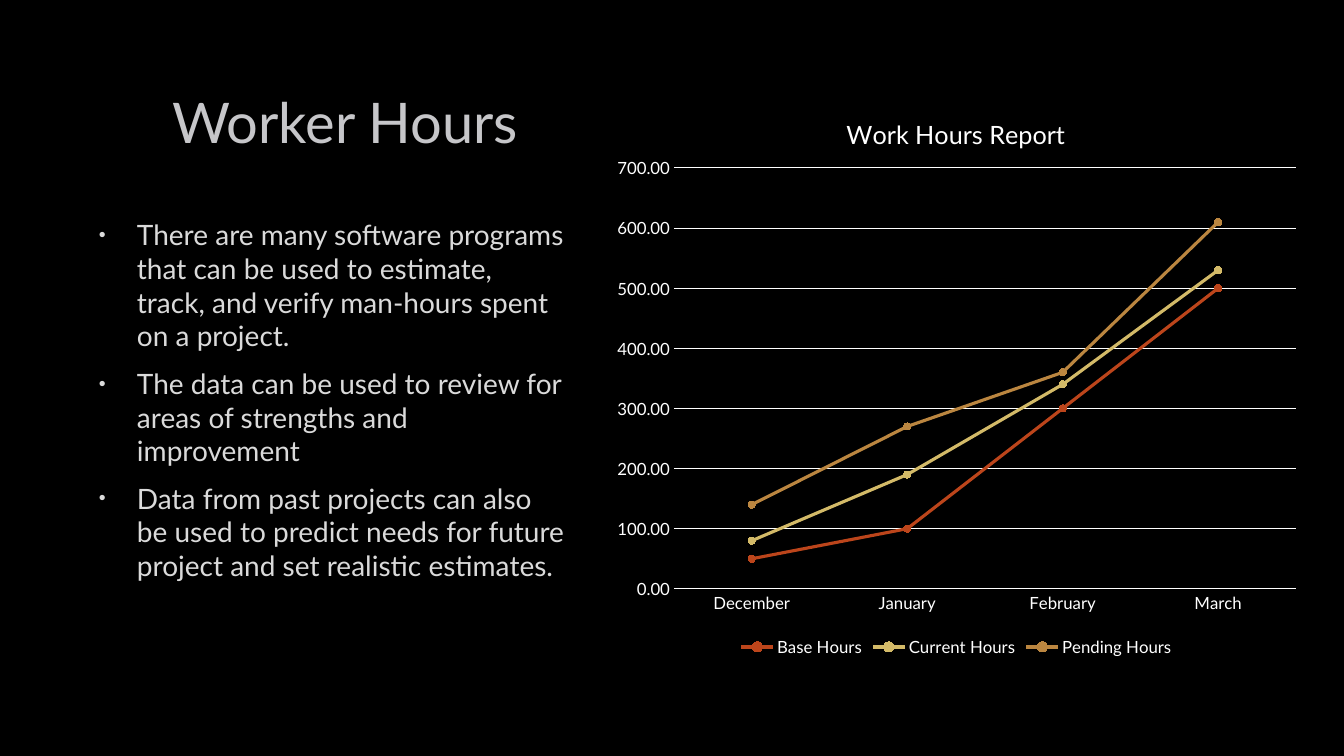
"""Build the Worker Hours slide: a bulleted text column beside a stacked line chart."""
from dataclasses import dataclass

from lxml import etree
from pptx import Presentation
from pptx.chart.axis import CategoryAxis, ValueAxis
from pptx.chart.chart import Chart
from pptx.chart.data import CategoryChartData
from pptx.dml.color import RGBColor
from pptx.enum.chart import XL_CHART_TYPE, XL_LEGEND_POSITION, XL_MARKER_STYLE, XL_TICK_MARK
from pptx.enum.text import MSO_ANCHOR, PP_ALIGN
from pptx.oxml import parse_xml
from pptx.oxml.ns import nsdecls, qn
from pptx.slide import Slide
from pptx.util import Emu, Pt

LINE_STACKED = XL_CHART_TYPE.LINE_MARKERS_STACKED
LEGEND_BOTTOM = XL_LEGEND_POSITION.BOTTOM
MARKER_CIRCLE = XL_MARKER_STYLE.CIRCLE
TICK_NONE = XL_TICK_MARK.NONE
TOP, MIDDLE = MSO_ANCHOR.TOP, MSO_ANCHOR.MIDDLE
LEFT, CENTER = PP_ALIGN.LEFT, PP_ALIGN.CENTER

FONT = "Lato"
BLACK = RGBColor(0x00, 0x00, 0x00)
WHITE = RGBColor(0xFF, 0xFF, 0xFF)
SILVER = RGBColor(0xC6, 0xC6, 0xC9)
LIGHT_GREY = RGBColor(0xDA, 0xDA, 0xDA)
OUTLINE_GREY = RGBColor(0x40, 0x40, 0x40)
RUST = RGBColor(0xBC, 0x45, 0x1B)
SAND = RGBColor(0xD3, 0xBA, 0x68)
BRONZE = RGBColor(0xBB, 0x86, 0x40)

EMU_PER_PX = 914400 / 100.8
BULLET_INDENT = 38


@dataclass(frozen=True)
class Area:
    """A rectangle in px."""

    left: int
    top: int
    width: int
    height: int

    def emu(self) -> tuple[Emu, Emu, Emu, Emu]:
        """Return the rectangle in EMU."""
        return px(self.left), px(self.top), px(self.width), px(self.height)


@dataclass(frozen=True)
class TextBlock:
    """A text box whose paragraphs share one format."""

    area: Area
    paragraphs: tuple[str, ...]
    size: int
    color: RGBColor
    anchor: MSO_ANCHOR
    align: PP_ALIGN
    bulleted: bool


@dataclass(frozen=True)
class HoursSeries:
    """One line of the chart."""

    name: str
    hours: tuple[int, ...]
    color: RGBColor


TEXT_BLOCKS = (
    TextBlock(Area(101, 68, 488, 107), ("Worker Hours",), 40, SILVER, MIDDLE, CENTER, False),
    TextBlock(
        Area(89, 213, 488, 448),
        (
            "There are many software programs that can be used to estimate, track, "
            "and verify man-hours spent on a project.",
            "The data can be used to review for areas of strengths and improvement",
            "Data from past projects can also be used to predict needs for future project "
            "and set realistic estimates.",
        ),
        20, LIGHT_GREY, TOP, LEFT, True,
    ),
)
CHART_AREA = Area(603, 89, 707, 572)
PLOT_AREA = Area(674, 168, 622, 421)
TITLE_LEFT, TITLE_TOP = 842, 112
MONTHS = ("December", "January", "February", "March")
SERIES = (
    HoursSeries("Base Hours", (50, 100, 300, 500), RUST),
    HoursSeries("Current Hours", (30, 90, 40, 30), SAND),
    HoursSeries("Pending Hours", (60, 80, 20, 80), BRONZE),
)


def px(length: int) -> Emu:
    """Convert px to EMU."""
    return Emu(round(length * EMU_PER_PX))


def apply(target: object, values: dict[str, object]) -> None:
    """Set each named attribute of the target."""
    for name, value in values.items():
        setattr(target, name, value)


def style_font(font: object, size: int, color: RGBColor) -> None:
    """Set the typeface, size and colour of a font."""
    apply(font, {"name": FONT, "size": Pt(size), "bold": False})
    font.color.rgb = color


def add_bullet(para: object, color: RGBColor) -> None:
    """Give a paragraph a hanging bullet and its spacing."""
    apply(para, {"space_before": Pt(4), "space_after": Pt(6)})
    properties = para._p.get_or_add_pPr()
    properties.set("marL", str(px(BULLET_INDENT)))
    properties.set("indent", str(-px(BULLET_INDENT)))
    for markup in (
        f'<a:buClr {nsdecls("a")}><a:srgbClr val="{color}"/></a:buClr>',
        f'<a:buSzPct {nsdecls("a")} val="70000"/>',
        f'<a:buFont {nsdecls("a")} typeface="Arial"/>',
        f'<a:buChar {nsdecls("a")} char="•"/>',
    ):
        properties.append(parse_xml(markup))


def add_outline(span: object) -> None:
    """Give a run a faint outline."""
    span._r.get_or_add_rPr().insert(0, parse_xml(
        f'<a:ln {nsdecls("a")} w="{Pt(0.75)}"><a:solidFill><a:srgbClr val="{OUTLINE_GREY}">'
        '<a:alpha val="10000"/></a:srgbClr></a:solidFill></a:ln>'
    ))


def add_text(page: Slide, block: TextBlock) -> None:
    """Draw one text block."""
    frame = page.shapes.add_textbox(*block.area.emu()).text_frame
    apply(frame, {"word_wrap": True, "vertical_anchor": block.anchor})
    for index, text in enumerate(block.paragraphs):
        para = frame.add_paragraph() if index else frame.paragraphs[0]
        para.alignment = block.align
        if block.bulleted:
            add_bullet(para, block.color)
        span = para.add_run()
        span.text = text
        style_font(span.font, block.size, block.color)
        add_outline(span)


def set_layout(parent: object, index: int, values: dict[str, object]) -> None:
    """Place a chart part by hand."""
    for old in parent.findall(qn("c:layout")):
        parent.remove(old)
    layout = etree.Element(qn("c:layout"))
    manual = etree.SubElement(layout, qn("c:manualLayout"))
    for name, value in values.items():
        etree.SubElement(manual, qn(f"c:{name}")).set("val", str(value))
    parent.insert(index, layout)


def fractions(left: int, top: int) -> dict[str, object]:
    """Return a point as fractions of the chart area."""
    return {
        "xMode": "edge",
        "yMode": "edge",
        "x": round((left - CHART_AREA.left) / CHART_AREA.width, 4),
        "y": round((top - CHART_AREA.top) / CHART_AREA.height, 4),
    }


def style_axis(axis: CategoryAxis | ValueAxis) -> None:
    """Set the labels and ticks of an axis."""
    apply(axis, {"major_tick_mark": TICK_NONE, "minor_tick_mark": TICK_NONE})
    style_font(axis.tick_labels.font, 12, WHITE)


def style_line(line: object, color: RGBColor, width: float) -> None:
    """Set the colour and width of a line."""
    line.color.rgb = color
    line.width = Pt(width)


def style_axes(chart: Chart) -> None:
    """Style both axes and the gridlines."""
    months, hours = chart.category_axis, chart.value_axis
    style_axis(months)
    style_axis(hours)
    style_line(months.format.line, WHITE, 0.75)
    apply(hours, {"minimum_scale": 0, "maximum_scale": 700, "major_unit": 100, "has_major_gridlines": True})
    style_line(hours.major_gridlines.format.line, WHITE, 0.75)
    hours.format.line.fill.background()
    apply(hours.tick_labels, {"number_format": "0.00", "number_format_is_linked": False})


def add_hours_chart(page: Slide) -> None:
    """Draw the stacked line chart."""
    data = CategoryChartData(number_format="0.00")
    data.categories = MONTHS
    for item in SERIES:
        data.add_series(item.name, item.hours)
    chart = page.shapes.add_chart(LINE_STACKED, *CHART_AREA.emu(), data).chart
    style_font(chart.font, 10, WHITE)
    apply(chart, {"has_title": True, "has_legend": True})
    apply(chart.legend, {"position": LEGEND_BOTTOM, "include_in_layout": False})
    style_font(chart.legend.font, 12, WHITE)
    span = chart.chart_title.text_frame.paragraphs[0].add_run()
    span.text = "Work Hours Report"
    style_font(span.font, 18, WHITE)
    set_layout(chart.chart_title._element, 1, fractions(TITLE_LEFT, TITLE_TOP))
    size = {
        "w": round(PLOT_AREA.width / CHART_AREA.width, 4),
        "h": round(PLOT_AREA.height / CHART_AREA.height, 4),
    }
    plot_layout = {"layoutTarget": "inner"} | fractions(PLOT_AREA.left, PLOT_AREA.top) | size
    set_layout(chart._chartSpace.chart.plotArea, 0, plot_layout)
    style_axes(chart)
    plot = chart.plots[0]
    plot.vary_by_categories = False
    for series, item in zip(plot.series, SERIES):
        series.smooth = False
        style_line(series.format.line, item.color, 2.25)
        apply(series.marker, {"style": MARKER_CIRCLE, "size": 5})
        series.marker.format.fill.solid()
        series.marker.format.fill.fore_color.rgb = item.color
        style_line(series.marker.format.line, item.color, 0.75)


def main() -> None:
    """Build and save the deck."""
    deck = Presentation()
    apply(deck, {"slide_width": px(1344), "slide_height": px(756)})
    page = deck.slides.add_slide(deck.slide_layouts[6])
    page.background.fill.solid()
    page.background.fill.fore_color.rgb = BLACK
    for block in TEXT_BLOCKS:
        add_text(page, block)
    add_hours_chart(page)
    deck.save("out.pptx")


if __name__ == "__main__":
    main()
